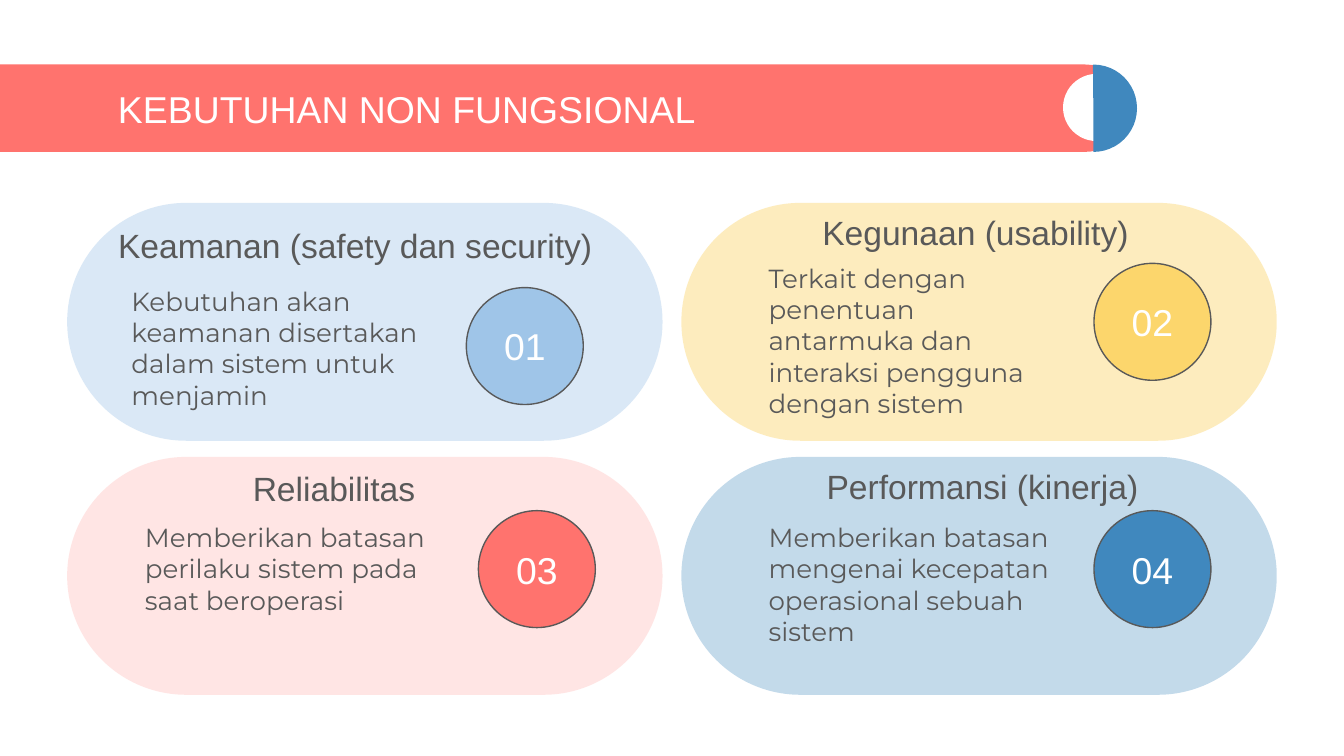
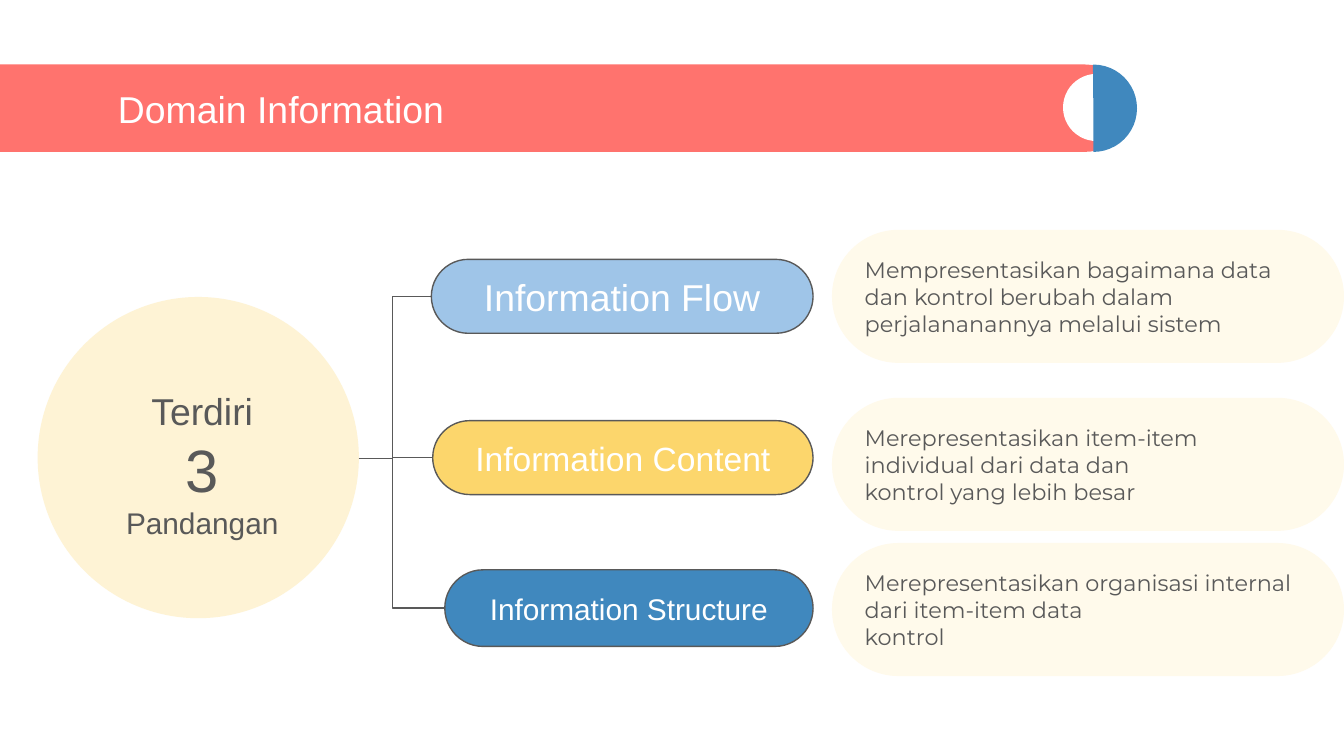
from itertools import cycle

from lxml import etree
from pptx import Presentation
from pptx.dml.color import RGBColor
from pptx.enum.shapes import MSO_CONNECTOR, MSO_SHAPE
from pptx.enum.text import MSO_ANCHOR, PP_ALIGN
from pptx.oxml.ns import qn
from pptx.util import Inches, Pt

ROUND, OVAL, PIE = MSO_SHAPE.ROUNDED_RECTANGLE, MSO_SHAPE.OVAL, MSO_SHAPE.PIE
ELBOW = MSO_CONNECTOR.ELBOW
LEFT, CENTER = PP_ALIGN.LEFT, PP_ALIGN.CENTER
TOP, MIDDLE = MSO_ANCHOR.TOP, MSO_ANCHOR.MIDDLE

WHITE = RGBColor(0xFF, 0xFF, 0xFF)
GREY = RGBColor(0x59, 0x59, 0x59)
CORAL = RGBColor(0xFF, 0x73, 0x6E)
BLUE = RGBColor(0x40, 0x88, 0xBE)
SKY = RGBColor(0x9F, 0xC5, 0xE8)
AMBER = RGBColor(0xFB, 0xBE, 0x18)
GOLD = RGBColor(0xFC, 0xD6, 0x6C)
CREAM = RGBColor(0xFF, 0xFA, 0xEB)

HEAD, BODY = "Arial", "Montserrat"


def write(shape, text, size=20, font=HEAD, color=GREY, align=LEFT,
          anchor=MIDDLE, after=0):
    """Fill a shape with text, one paragraph a line; size may be a list."""
    frame = shape.text_frame
    frame.word_wrap = True
    frame.vertical_anchor = anchor
    frame.margin_left = frame.margin_right = Inches(0.1)
    frame.margin_top = frame.margin_bottom = Inches(0.1)
    frame.text = text
    sizes = cycle(size if isinstance(size, list) else [size])
    for para, points in zip(frame.paragraphs, sizes):
        para.alignment = align
        para.space_after = Pt(after)
        run = para.runs[0].font
        run.name, run.size, run.color.rgb = font, Pt(points), color


def label(slide, box, text, **style):
    area = slide.shapes.add_textbox(*map(Inches, box))
    write(area, text, **style)


def block(slide, kind, box, fill, alpha=None, lined=False):
    shape = slide.shapes.add_shape(kind, *map(Inches, box))
    shape.shadow.inherit = False
    shape.fill.solid()
    shape.fill.fore_color.rgb = fill
    if alpha:
        tint = shape.fill._xPr.find(".//" + qn("a:srgbClr"))
        etree.SubElement(tint, qn("a:alpha"), val=str(alpha * 1000))
    if lined:
        shape.line.color.rgb = GREY
        shape.line.width = Pt(0.75)
    else:
        shape.line.fill.background()
    if kind == ROUND:
        shape.adjustments[0] = 0.5
    return shape


def branch(slide, start, end, trunk):
    """Elbow line that turns at the x position of the trunk."""
    line = slide.shapes.add_connector(ELBOW, *map(Inches, start + end))
    line.line.color.rgb = GREY
    line.line.width = Pt(0.75)
    props = line._element.spPr
    etree.SubElement(props, qn("a:effectLst"))
    guides = props.find(".//" + qn("a:avLst"))
    turn = round((trunk - start[0]) / (end[0] - start[0]) * 100000)
    etree.SubElement(guides, qn("a:gd"), name="adj1", fmla=f"val {turn}")


def start_slide(deck, title):
    """New slide with the title band and its half-disc end."""
    slide = deck.slides.add_slide(deck.slide_layouts[6])
    block(slide, ROUND, (-0.32, 0.48, 8.72, 0.65), CORAL)
    block(slide, OVAL, (7.91, 0.55, 0.5, 0.5), WHITE)
    half = block(slide, PIE, (7.81, 0.48, 0.65, 0.65), BLUE)
    half.rotation = 180
    half.adjustments[0], half.adjustments[1] = 53.67, 162
    label(slide, (0.78, 0.6, 6.97, 0.41), title, color=WHITE)
    return slide


def needs(deck):
    slide = start_slide(deck, "KEBUTUHAN NON FUNGSIONAL")
    # Card tint, alpha, badge colour; heading, its box, alignment;
    # body, its box; badge corner
    cards = [
        (SKY, 38, SKY,
         "Keamanan (safety dan security)", (0.78, 1.68, 5.75, 0.29), LEFT,
         "Kebutuhan akan keamanan disertakan dalam sistem untuk menjamin",
         (0.88, 2.02, 2.69, 0.89), (3.47, 2.14)),
        (AMBER, 28, GOLD,
         "Kegunaan (usability)", (6.02, 1.58, 5.75, 0.29), LEFT,
         "Terkait dengan penentuan antarmuka dan interaksi pengguna "
         "dengan sistem",
         (5.62, 1.85, 2.32, 0.89), (8.14, 1.96)),
        (CORAL, 18, CORAL,
         "Reliabilitas", (1.39, 3.47, 2.19, 0.32), CENTER,
         "Memberikan batasan perilaku sistem pada saat beroperasi",
         (0.98, 3.78, 2.34, 0.89), (3.56, 3.8)),
        (BLUE, 31, BLUE,
         "Performansi (kinerja)", (5.84, 3.5, 2.94, 0.24), CENTER,
         "Memberikan batasan mengenai kecepatan operasional sebuah sistem",
         (5.62, 3.78, 2.32, 0.89), (8.14, 3.8)),
    ]
    # Cards lie under everything else
    for i, (tint, alpha, *_) in enumerate(cards):
        row, col = divmod(i, 2)
        box = (0.5 + 4.57 * col, 1.51 + 1.89 * row, 4.43, 1.77)
        block(slide, ROUND, box, tint, alpha=alpha)
    for i, (_, _, hue, head, spot, align, body, area,
            corner) in enumerate(cards, 1):
        label(slide, area, body, size=14, font=BODY, anchor=TOP, after=16)
        badge = block(slide, OVAL, corner + (0.87, 0.87), hue, lined=True)
        write(badge, f"{i:02}", color=WHITE, align=CENTER)
        label(slide, spot, head, size=18, align=align)


def views(deck):
    slide = start_slide(deck, "Domain Information")
    # Hub
    block(slide, OVAL, (0.28, 2.21, 2.39, 2.39), AMBER, alpha=18)
    label(slide, (0.31, 2.79, 2.39, 0.98), "Terdiri\n3\nPandangan",
          size=[20, 32, 16], align=CENTER, anchor=TOP)
    # Name, size, colour; pill left, top, height; note and its top
    rows = [
        ("Information Flow", 20, SKY, 3.21, 1.93, 0.55,
         "Mempresentasikan bagaimana data dan kontrol berubah dalam "
         "perjalananannya melalui sistem", 1.71),
        ("Information Content", 18, GOLD, 3.22, 3.13, 0.55,
         "Merepresentasikan item-item individual dari data dan\n"
         "kontrol yang lebih besar", 2.96),
        ("Information Structure", 16, BLUE, 3.31, 4.24, 0.57,
         "Merepresentasikan organisasi internal dari item-item data\n"
         "kontrol", 4.04),
    ]
    for name, size, hue, left, top, tall, note, high in rows:
        panel = block(slide, ROUND, (6.19, high, 3.81, 0.99), CREAM)
        write(panel, note, size=12, font=BODY)
        pill = block(slide, ROUND, (left, top, 6.05 - left, tall), hue,
                     lined=True)
        write(pill, name, size=size, color=WHITE, align=CENTER)
        branch(slide, (2.67, 3.41), (left, top + tall / 2), 2.92)


def main():
    deck = Presentation()
    # Widescreen, 16 to 9
    deck.slide_width, deck.slide_height = Inches(10), Inches(10 * 9 / 16)
    needs(deck)
    views(deck)
    deck.save("out.pptx")


if __name__ == "__main__":
    main()
